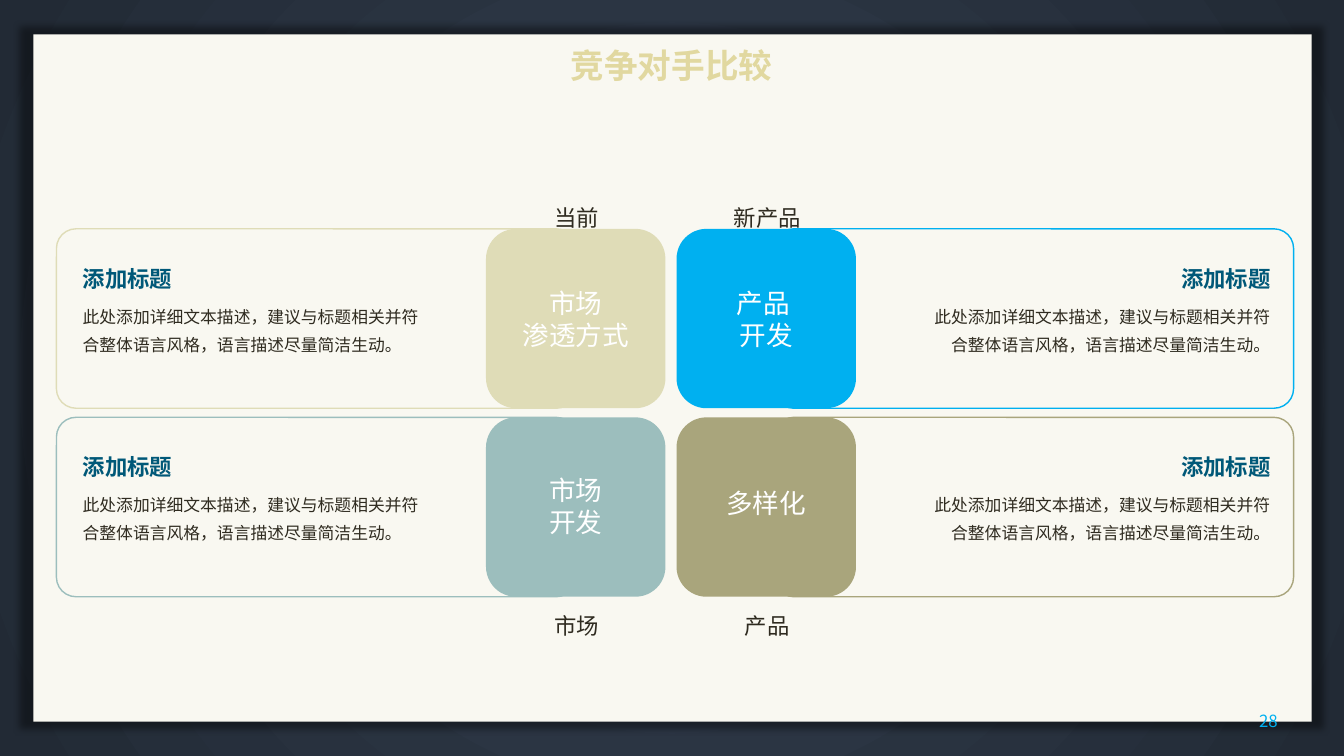
import copy
import dataclasses

import lxml.etree
import pptx
import pptx.dml.color
import pptx.enum.shapes
import pptx.enum.text
import pptx.oxml
import pptx.oxml.ns
import pptx.util

Inches = pptx.util.Inches
Pt = pptx.util.Pt
Shape = pptx.enum.shapes.MSO_SHAPE
Align = pptx.enum.text.PP_ALIGN
Anchor = pptx.enum.text.MSO_ANCHOR
qn = pptx.oxml.ns.qn


@dataclasses.dataclass
class Theme:
    face: str = "Noto Sans CJK SC"
    page: str = "F9F8F1"
    dark: tuple = ("333F50", "222A35")
    gold: str = "E1D8A0"
    sky: str = "00B0F0"
    navy: str = "005878"
    ink: str = "2F2B20"
    white: str = "FFFFFF"
    title: int = 24
    tile: int = 19
    head: int = 16
    small: int = 12


THEME = Theme()
HEAD = "添加标题"
BODY = "此处添加详细文本描述，建议与标题相关并符合整体语言风格，语言描述尽量简洁生动。"

# Tile lines, label top within the card, caption, colour; row by row
CARDS = [
    (["市场", "渗透方式"], 0.58, "当前", "DFDCB7"),
    (["产品 ", "开发"], 0.58, "新产品", THEME.sky),
    (["市场", "开发"], 0.56, "市场", "9CBEBD"),
    (["多样化"], 0.69, "产品", "A9A57C"),
]
WIDE, SIDE = 5.15, 1.78


def color(code):
    return pptx.dml.color.RGBColor.from_string(code)


def assign(item, values):
    for key, value in values.items():
        setattr(item, key, value)


def place(item, box):
    keys = ("left", "top", "width", "height")
    assign(item, {key: Inches(size) for key, size in zip(keys, box)})


def write(shape, lines, size, tint, align, pad=0, bold=False, space=1.0,
          anchor=Anchor.TOP):
    frame = shape.text_frame
    margins = ("margin_left", "margin_top", "margin_right", "margin_bottom")
    assign(frame, dict.fromkeys(margins, Inches(pad)))
    assign(frame, {"word_wrap": True, "vertical_anchor": anchor})
    for i, line in enumerate(lines):
        para = frame.add_paragraph() if i else frame.paragraphs[0]
        assign(para, {"alignment": align, "line_spacing": space,
                      "space_before": Pt(0)})
        run = para.add_run()
        run.text = line
        assign(run.font, {"size": Pt(size), "bold": bold, "name": THEME.face})
        run.font.color.rgb = color(tint)
        east = copy.deepcopy(run.font._element.find(qn("a:latin")))
        east.tag = qn("a:ea")
        run.font._element.append(east)


def add_text(shapes, box, lines, *style, **extra):
    shape = shapes.add_textbox(*map(Inches, box))
    write(shape, lines, *style, **extra)


def add_round(shapes, box, bend, fill=None, line=None):
    shape = shapes.add_shape(Shape.ROUNDED_RECTANGLE, *map(Inches, box))
    shape.shadow.inherit = False
    shape.adjustments[0] = bend
    if fill:
        shape.fill.solid()
        shape.fill.fore_color.rgb = color(fill)
    else:
        shape.fill.background()
    if line:
        shape.line.color.rgb = color(line)
        shape.line.width = Pt(1)
    else:
        shape.line.fill.background()


def add_back(slide):
    # Radial gradient behind the page
    fill = slide.background.fill
    fill.gradient()
    for stop, code in zip(fill.gradient_stops, THEME.dark):
        stop.color.rgb = color(code)
    grad = slide.background._cSld.find(".//" + qn("a:gradFill"))
    grad.remove(grad.find(qn("a:lin")))
    ring = lxml.etree.SubElement(grad, qn("a:path"), {"path": "circle"})
    lxml.etree.SubElement(ring, qn("a:fillToRect"),
                          dict.fromkeys("ltrb", "50000"))


def add_page(slide, box):
    page = slide.shapes.add_shape(Shape.RECTANGLE, *map(Inches, box))
    page.fill.solid()
    page.fill.fore_color.rgb = color(THEME.page)
    page.line.fill.background()
    # Soft dark edge
    page.shadow.inherit = False
    effects = page._element.spPr.find(qn("a:effectLst"))
    effects.append(pptx.oxml.parse_xml(
        f'<a:outerShdw {pptx.oxml.ns.nsdecls("a")} blurRad="{Pt(5)}" '
        'sx="102000" sy="102000" algn="ctr" rotWithShape="0">'
        '<a:srgbClr val="000000"><a:alpha val="40000"/></a:srgbClr>'
        '</a:outerShdw>'))


def add_card(slide, box, right, below, card):
    lines, drop, note, tint = card
    left, top, wide, high = box
    shapes = slide.shapes.add_group_shape().shapes
    tile = left - 0.97 if right else left + 4.26
    text = left + 1.45 if right else left + 0.21
    align = Align.RIGHT if right else Align.LEFT

    # Outline and tile
    add_round(shapes, box, 0.109, line=tint)
    add_round(shapes, (tile, top, high, high), 0.167, fill=tint)
    add_text(shapes, (tile, top + drop, high, 0.32 * len(lines)), lines,
             THEME.tile, THEME.white, Align.CENTER)

    # Heading and description
    add_text(shapes, (text, top + 0.64, 3.52, 0.64), [BODY], THEME.small,
             THEME.ink, align, pad=0.05, space=1.4)
    add_text(shapes, (text, top + 0.2, 3.52, 0.44), [HEAD], THEME.head,
             THEME.navy, align, pad=0.05, bold=True, space=1.4)

    # Caption outside the tile
    edge = top + 1.76 if below else top - 0.42
    add_text(shapes, (tile + 0.02, edge, 1.76, 0.47), [note], THEME.head,
             THEME.ink, Align.CENTER, pad=0.07, space=1.4)


def add_grid(slide, box):
    left, top, wide, high = box
    for i, card in enumerate(CARDS):
        row, col = divmod(i, 2)
        spot = (left + col * (wide - WIDE), top + row * (high - SIDE),
                WIDE, SIDE)
        add_card(slide, spot, col == 1, row == 1, card)


def add_title(slide, box):
    title = slide.shapes.title
    place(title, box)
    write(title, ["竞争对手比较"], THEME.title, THEME.gold, Align.CENTER,
          pad=0.05, bold=True, anchor=Anchor.MIDDLE)
    slide.shapes._spTree.append(title._element)


def main():
    deck = pptx.Presentation()
    assign(deck, {"slide_width": Inches(13.33), "slide_height": Inches(7.5)})
    slide = deck.slides.add_slide(deck.slide_layouts[5])
    add_back(slide)
    add_page(slide, (0.33, 0.34, 12.68, 6.82))
    add_grid(slide, (0.56, 2.27, 12.27, 3.65))
    # Slide number
    add_text(slide.shapes, (12.25, 6.95, 0.52, 0.4), ["28"], THEME.small,
             THEME.sky, Align.RIGHT, pad=0.1, anchor=Anchor.MIDDLE)
    add_title(slide, (0.56, 0.4, 12.2, 0.5))
    deck.save("out.pptx")


if __name__ == "__main__":
    main()
